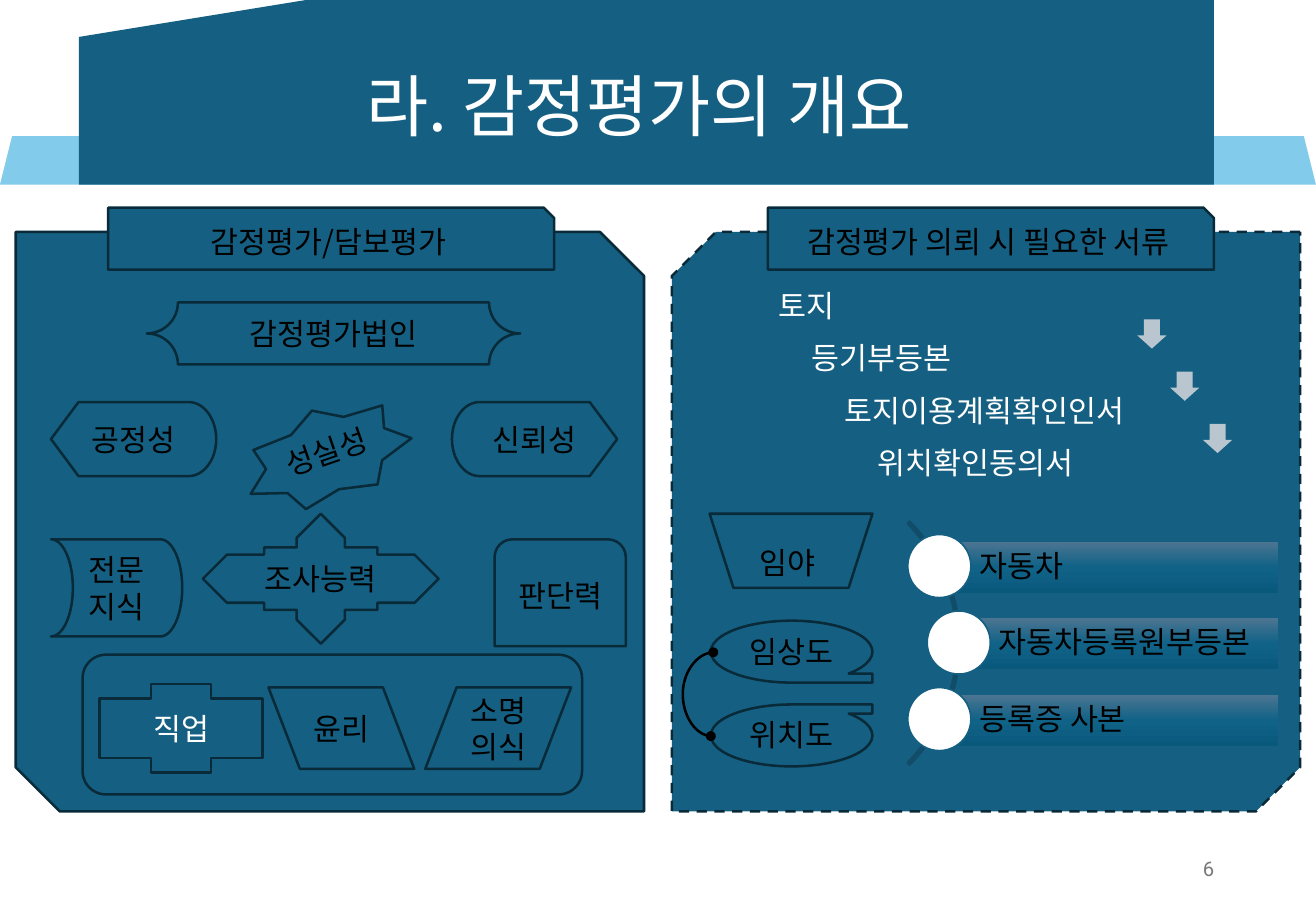
from dataclasses import dataclass

from lxml.etree import SubElement
from pptx import Presentation
from pptx.dml.color import RGBColor
from pptx.enum.dml import MSO_LINE
from pptx.enum.shapes import MSO_CONNECTOR, MSO_SHAPE as Shape
from pptx.enum.text import MSO_ANCHOR as Anchor, MSO_AUTO_SIZE as AutoSize, PP_ALIGN as Align
from pptx.oxml import parse_xml
from pptx.oxml.ns import nsdecls, qn
from pptx.util import Emu, Pt

SCALE = 9144


@dataclass(frozen=True)
class Theme:
    blue: str = "156082"
    sky: str = "83CBEB"
    outline: str = "092A39"
    arc: str = "114D68"
    arrow: str = "CCD2D8"
    black: str = "000000"
    white: str = "FFFFFF"
    gray: str = "797979"
    bar: tuple = ((0, "4C7591"), (50, "106287"), (100, "09597D"))
    font: str = "Noto Sans CJK KR"
    number_font: str = "Roboto"
    title_size: int = 40
    body_size: int = 18
    number_size: int = 12


def px(*values):
    return [Emu(value * SCALE) for value in values]


def apply(target, values):
    for name, value in values.items():
        setattr(target, name, value)


class SlideBuilder:
    def __init__(self, page, theme):
        self.page = page
        self.theme = theme
        self.canvas = page.shapes

    def group(self):
        self.canvas = self.page.shapes.add_group_shape().shapes

    def fill_text(self, box, text, color=None, size=None, font=None, align=Align.CENTER,
                  spacing=None, insets=None, **frame_format):
        theme = self.theme
        frame = box.text_frame
        apply(frame, {"word_wrap": True, "vertical_anchor": Anchor.MIDDLE, **frame_format})
        if insets:
            sides = ("margin_left", "margin_top", "margin_right", "margin_bottom")
            apply(frame, dict(zip(sides, px(*insets))))
        font = font or theme.font
        for index, line in enumerate(text.split("\n")):
            para = frame.add_paragraph() if index else frame.paragraphs[0]
            apply(para, {"alignment": align, "line_spacing": spacing})
            span = para.add_run()
            span.text = line
            apply(span.font, {"size": Pt(size or theme.body_size), "name": font})
            span.font.color.rgb = RGBColor.from_string(color or theme.black)
            SubElement(span.font._element, qn("a:ea"), typeface=font)

    def title(self, box, text):
        title = self.page.shapes.title
        apply(title, dict(zip(("left", "top", "width", "height"), px(*box))))
        self.fill_text(title, text, self.theme.white, self.theme.title_size, spacing=0.9,
                       auto_size=AutoSize.NONE)
        self.page.shapes.element.append(title.element)

    def shape(self, kind, box, text=None, fill="", line="", width=1.5, dash=None,
              flip=None, rotation=0, adjust=(), **text_format):
        shape = self.canvas.add_shape(kind, *px(*box))
        apply(shape, {"rotation": rotation})
        shape.shadow.inherit = False
        for index, value in enumerate(adjust):
            shape.adjustments[index] = value
        if flip:
            shape.element.spPr.get_or_add_xfrm().set(flip, "1")
        if fill is None:
            shape.fill.background()
        else:
            shape.fill.solid()
            shape.fill.fore_color.rgb = RGBColor.from_string(fill or self.theme.blue)
        if line is None:
            shape.line.fill.background()
        else:
            shape.line.color.rgb = RGBColor.from_string(line or self.theme.outline)
            apply(shape.line, {"width": Pt(width), "dash_style": dash})
        if text:
            self.fill_text(shape, text, **text_format)
        return shape

    def label(self, box, text, **text_format):
        self.fill_text(self.canvas.add_textbox(*px(*box)), text, **text_format)

    def gradient_bar(self, box, text, **text_format):
        bar = self.shape(Shape.RECTANGLE, box, text, line=None, **text_format)
        stops = "".join(f'<a:gs pos="{at * 1000}"><a:srgbClr val="{color}"/></a:gs>'
                        for at, color in self.theme.bar)
        solid = bar.element.spPr.find(qn("a:solidFill"))
        solid.getparent().replace(solid, parse_xml(
            f'<a:gradFill {nsdecls("a")} rotWithShape="1"><a:gsLst>{stops}</a:gsLst>'
            '<a:lin ang="5400000" scaled="0"/></a:gradFill>'))

    def down_arrow(self, box):
        arrow = self.shape(Shape.DOWN_ARROW, box, fill=self.theme.arrow, line=None,
                           adjust=(0.55, 0.45))
        color = arrow.element.spPr.find(qn("a:solidFill")).find(qn("a:srgbClr"))
        SubElement(color, qn("a:alpha"), val="90000")

    def curve(self, start, end, bend):
        link = self.canvas.add_connector(MSO_CONNECTOR.CURVE, *px(*start, *end))
        link.line.color.rgb = RGBColor.from_string(self.theme.black)
        link.line.width = Pt(1.5)
        properties = link.element.spPr
        geometry = properties.find(qn("a:prstGeom"))
        guides = geometry.find(qn("a:avLst"))
        if guides is None:
            guides = SubElement(geometry, qn("a:avLst"))
        SubElement(guides, qn("a:gd"), name="adj1", fmla=f"val {bend}")
        for end_name in ("headEnd", "tailEnd"):
            SubElement(properties.find(qn("a:ln")), qn(f"a:{end_name}"), type="oval")
        SubElement(properties, qn("a:effectLst"))


def draw_header(slide):
    theme = slide.theme
    slide.shape(Shape.TRAPEZOID, (0, 112, 1083, 40), fill=theme.sky, line=None)
    slide.shape(Shape.FLOWCHART_CARD, (65, 0, 934, 152), line=None)
    slide.title((53, 18, 946, 145), "라. 감정평가의 개요")
    slide.label((765, 695, 244, 40), "6", color=theme.gray, size=theme.number_size,
                font=theme.number_font, align=Align.RIGHT)


def draw_documents(slide):
    theme = slide.theme
    slide.group()
    slide.shape(Shape.SNIP_2_DIAG_RECTANGLE, (553, 191, 517, 477), flip="flipH",
                adjust=(0, 0.076), dash=MSO_LINE.DASH)
    slide.shape(Shape.SNIP_1_RECTANGLE, (632, 171, 367, 51), "감정평가 의뢰 시 필요한 서류")

    steps = ("토지", "등기부등본", "토지이용계획확인인서", "위치확인동의서")
    for index, step in enumerate(steps):
        slide.shape(Shape.ROUNDED_RECTANGLE, (633 + 27 * index, 235 + 43 * index, 327, 37),
                    step, line=None, adjust=(0.1,), color=theme.white, align=Align.LEFT,
                    spacing=0.9, insets=(7, 7, 7, 7))
    for index in range(len(steps) - 1):
        slide.down_arrow((936 + 27 * index, 263 + 43 * index, 24, 24))

    label = {"align": Align.LEFT, "vertical_anchor": Anchor.TOP,
             "auto_size": AutoSize.SHAPE_TO_FIT_TEXT}
    slide.shape(Shape.TRAPEZOID, (584, 423, 134, 61), flip="flipV", adjust=(0.322,))
    slide.label((615, 443, 103, 40), "임야", **label)
    slide.shape(Shape.FLOWCHART_SEQUENTIAL_ACCESS_STORAGE, (585, 511, 133, 51), "임상도",
                word_wrap=False)
    slide.shape(Shape.FLOWCHART_SEQUENTIAL_ACCESS_STORAGE, (585, 580, 133, 51), flip="flipV")
    slide.label((607, 585, 153, 40), "위치도", **label)
    slide.curve((587, 537), (585, 606), 1250000)

    slide.shape(Shape.BLOCK_ARC, (507, 388, 283, 283), fill=None, line=theme.arc,
                adjust=(189, 27, 0.008))
    bars = (("자동차", 773), ("자동차등록원부등본", 789), ("등록증 사본", 773))
    for index, (text, left) in enumerate(bars):
        top = 446 + 63 * index
        slide.gradient_bar((left, top, 1052 - left, 42), text, align=Align.LEFT,
                           spacing=0.9, insets=(33, 5, 5, 5))
        slide.shape(Shape.OVAL, (left - 26, top - 6, 52, 52), fill=theme.white,
                    line=theme.blue, width=1)


def draw_appraisal(slide):
    slide.group()
    slide.shape(Shape.SNIP_2_DIAG_RECTANGLE, (13, 191, 517, 477), adjust=(0, 0.076))
    slide.shape(Shape.SNIP_1_RECTANGLE, (89, 171, 367, 51), "감정평가/담보평가")
    slide.shape(Shape.PLAQUE, (121, 249, 307, 51), "감정평가법인", adjust=(0.5,))
    slide.shape(Shape.FLOWCHART_DISPLAY, (42, 331, 136, 61), "공정성", word_wrap=False)
    slide.shape(Shape.FLOWCHART_STORED_DATA, (42, 444, 108, 80), "전문지식", flip="flipH")
    slide.shape(Shape.FLOWCHART_DISPLAY, (372, 331, 136, 61), "신뢰성", flip="flipH",
                word_wrap=False)
    slide.shape(Shape.QUAD_ARROW_CALLOUT, (167, 423, 194, 107), "조사능력",
                adjust=(0.37, 0.185, 0.185, 0.481), word_wrap=False)
    slide.shape(Shape.ROUND_2_SAME_RECTANGLE, (407, 444, 108, 88), "판단력")
    slide.shape(Shape.ROUNDED_RECTANGLE, (68, 539, 411, 115))
    slide.shape(Shape.MATH_PLUS, (58, 550, 182, 99), "직업", adjust=(0.496,),
                color=slide.theme.white)
    slide.shape(Shape.PARALLELOGRAM, (221, 566, 120, 67), "윤리", flip="flipH",
                adjust=(0.385,))
    slide.shape(Shape.PARALLELOGRAM, (350, 566, 120, 67), "소명\n의식", adjust=(0.385,))
    slide.shape(Shape.STAR_7_POINT, (199, 336, 140, 75), "성실성", rotation=340.9,
                adjust=(0.367,), word_wrap=False)


def main():
    deck = Presentation()
    apply(deck, dict(zip(("slide_width", "slide_height"), px(1083, 750))))
    slide = SlideBuilder(deck.slides.add_slide(deck.slide_layouts[5]), Theme())
    draw_header(slide)
    draw_documents(slide)
    draw_appraisal(slide)
    deck.save("out.pptx")


if __name__ == "__main__":
    main()
